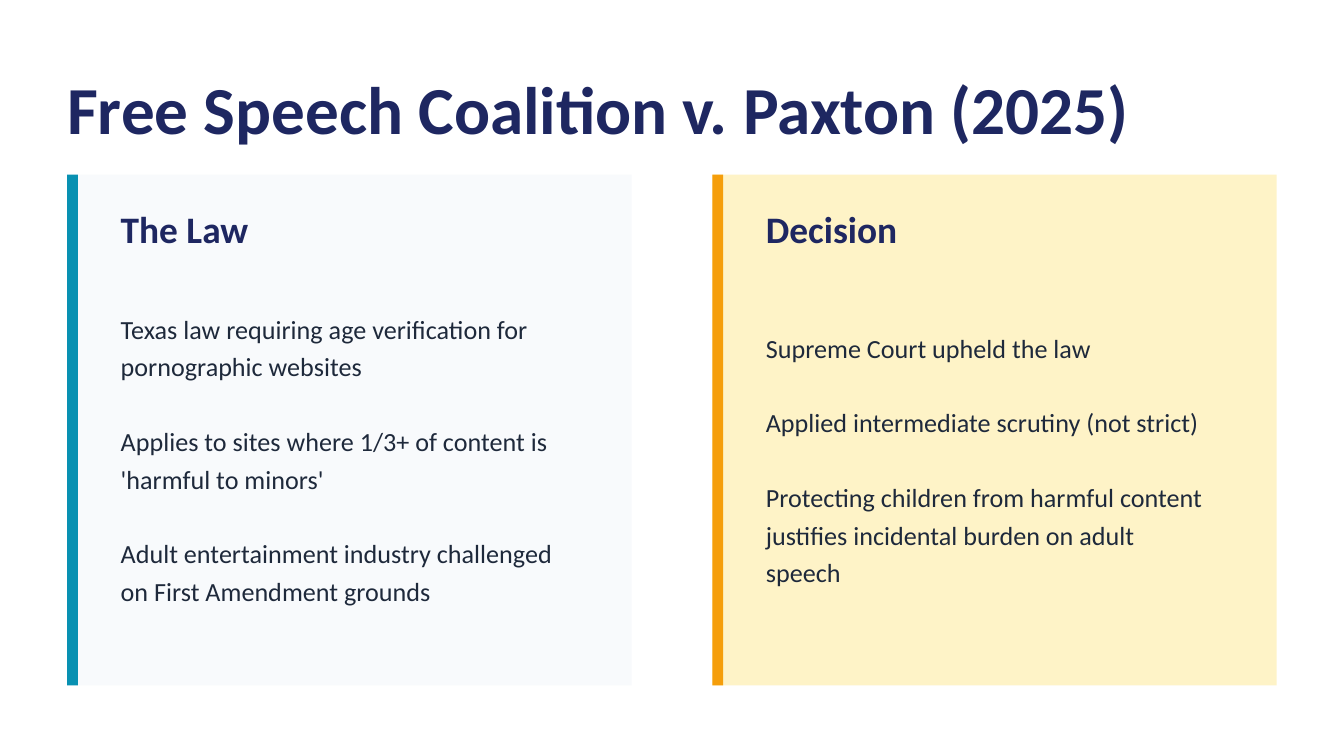
from pptx import Presentation
from pptx.dml.color import RGBColor
from pptx.enum.shapes import MSO_SHAPE
from pptx.enum.text import MSO_ANCHOR, MSO_AUTO_SIZE, PP_ALIGN
from pptx.util import Pt

NAVY = RGBColor(0x1E, 0x27, 0x61)
SLATE = RGBColor(0x1E, 0x29, 0x3B)
TEAL = RGBColor(0x08, 0x91, 0xB2)
AMBER = RGBColor(0xF5, 0x9E, 0x0B)
PALE = RGBColor(0xF8, 0xFA, 0xFC)
CREAM = RGBColor(0xFE, 0xF3, 0xC7)
FONT = "Calibri"

LAW = [
    "Texas law requiring age verification for pornographic websites",
    "Applies to sites where 1/3+ of content is 'harmful to minors'",
    "Adult entertainment industry challenged on First Amendment grounds",
]
RULING = [
    "Supreme Court upheld the law",
    "Applied intermediate scrutiny (not strict)",
    "Protecting children from harmful content justifies incidental burden on adult speech",
]


def add_run(para, text, size, color, bold=False):
    """Add one styled run to a paragraph."""
    run = para.add_run()
    run.text = text
    font = run.font
    font.name, font.size, font.bold = FONT, Pt(size), bold
    font.color.rgb = color


def set_frame(frame):
    """Wrap a text frame and centre it vertically."""
    frame.word_wrap = True
    frame.auto_size = MSO_AUTO_SIZE.NONE
    frame.vertical_anchor = MSO_ANCHOR.MIDDLE


def add_rect(slide, left, top, width, height, color):
    """Draw a plain filled rectangle."""
    rect = slide.shapes.add_shape(
        MSO_SHAPE.RECTANGLE, Pt(left), Pt(top), Pt(width), Pt(height))
    rect.shadow.inherit = False
    rect.fill.solid()
    rect.fill.fore_color.rgb = color
    rect.line.fill.background()


def add_text(slide, left, top, width, height):
    """Add a text box and return its frame."""
    box = slide.shapes.add_textbox(Pt(left), Pt(top), Pt(width), Pt(height))
    set_frame(box.text_frame)
    return box.text_frame


def add_title(slide, left, top, width, height, text):
    """Place and format the title placeholder."""
    title = slide.shapes.title
    title.left, title.top = Pt(left), Pt(top)
    title.width, title.height = Pt(width), Pt(height)
    frame = title.text_frame
    set_frame(frame)
    frame.margin_left = frame.margin_right = Pt(0)
    frame.margin_top = frame.margin_bottom = Pt(0)
    para = frame.paragraphs[0]
    para.alignment = PP_ALIGN.LEFT
    add_run(para, text, 36, NAVY, True)


def add_card(slide, left, top, width, height, head, points, fill, accent):
    """Draw a card with an accent bar, a heading and its points."""
    add_rect(slide, left, top, width, height, fill)
    add_rect(slide, left, top, 5.76, height, accent)
    inner = left + 21.6, width - 50.4
    frame = add_text(slide, inner[0], top + 14.4, inner[1], 28.8)
    add_run(frame.paragraphs[0], head, 20, NAVY, True)
    frame = add_text(slide, inner[0], top + 50.4, inner[1], height - 72)
    for i, point in enumerate(points):
        para = frame.add_paragraph() if i else frame.paragraphs[0]
        para.line_spacing = Pt(20)
        if i:
            para.space_before = Pt(20)
        add_run(para, point, 14, SLATE)


def main():
    """Build the slide and save it."""
    deck = Presentation()
    deck.slide_width, deck.slide_height = Pt(720), Pt(405)
    slide = deck.slides.add_slide(deck.slide_layouts[5])
    add_title(slide, 36, 36, 648, 43.2, "Free Speech Coalition v. Paxton (2025)")
    cards = [("The Law", LAW, PALE, TEAL), ("Decision", RULING, CREAM, AMBER)]
    for i, card in enumerate(cards):
        add_card(slide, 36 + i * 345.6, 93.6, 302.4, 273.6, *card)
    deck.save("out.pptx")


if __name__ == "__main__":
    main()
